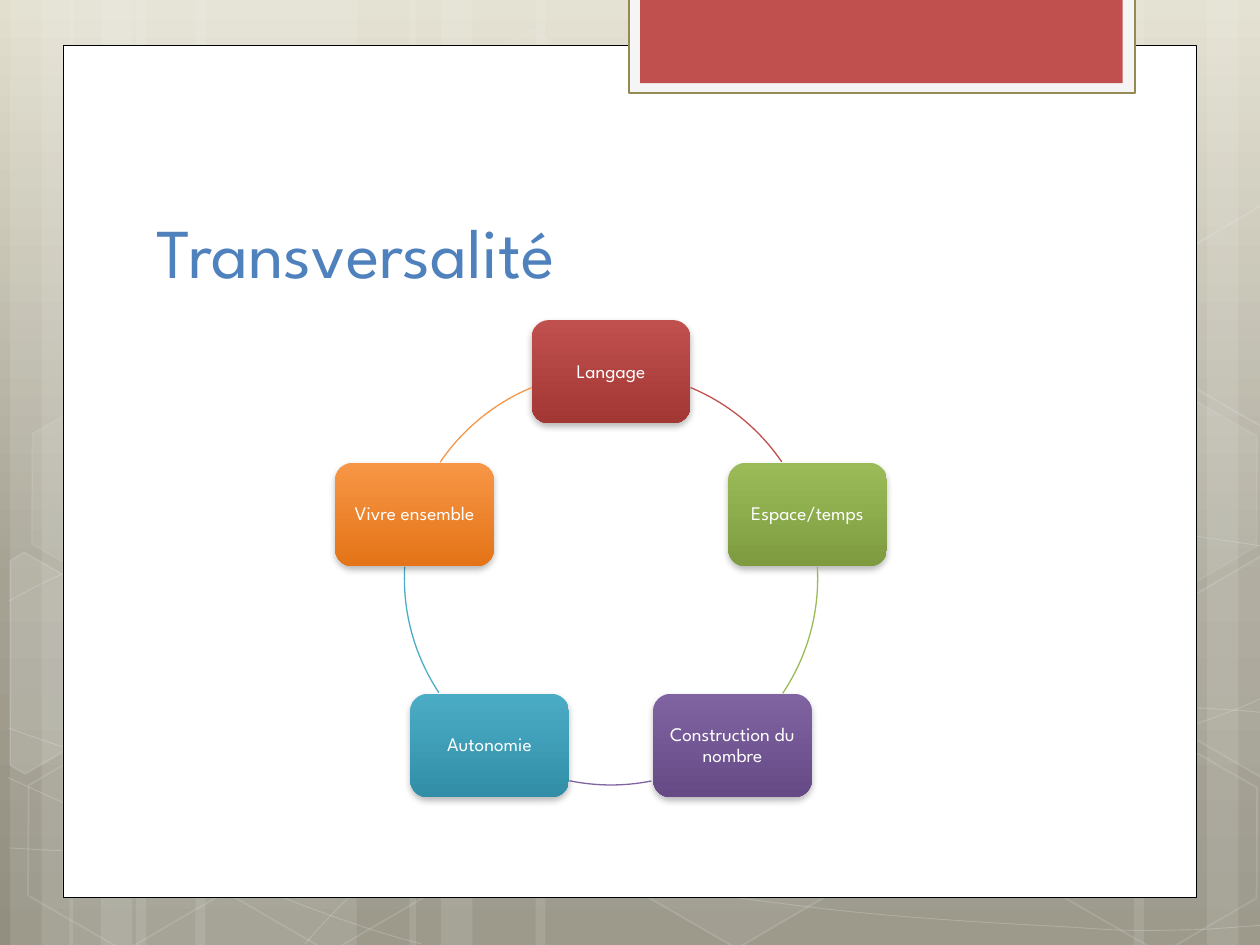
from copy import deepcopy
from math import cos, radians, sin

from lxml.etree import SubElement
from pptx import Presentation
from pptx.dml.color import RGBColor
from pptx.enum.shapes import MSO_SHAPE as Preset
from pptx.enum.text import MSO_ANCHOR as Anchor, PP_ALIGN as Align
from pptx.oxml.ns import qn
from pptx.util import Inches, Pt

FONT = "League Spartan"
COLORS = {
    "white": "FFFFFF", "black": "000000", "tab": "C0504D",
    "tab frame": "F5F5F5", "tab edge": "948A54", "title": "4F81BD",
}

prs = Presentation()
prs.slide_width, prs.slide_height = Inches(10), Inches(7.5)
slide = prs.slides.add_slide(prs.slide_layouts[6])
shapes = slide.shapes


def paint(shape, fill=None, line=None, width=1, fill_alpha=100, line_alpha=100):
    """Give a shape a flat fill and line (None for no paint) and no shadow."""
    shape.shadow.inherit = False
    for target, color, alpha in ((shape.fill, fill, fill_alpha),
                                 (shape.line.fill, line, line_alpha)):
        if color is None:
            target.background()
            continue
        target.solid()
        target.fore_color.rgb = RGBColor.from_string(color)
        if alpha < 100:
            parent = "p:spPr" if target is shape.fill else "p:spPr/a:ln"
            steps = [qn(tag) for tag in f"{parent}/a:solidFill/a:srgbClr".split("/")]
            rgb = shape.element.find("/".join(steps))
            SubElement(rgb, qn("a:alpha"), val=str(alpha * 1000))
    if line:
        shape.line.width = Pt(width)
    return shape


def outline(points, close):
    """Draw a freeform through points given in inches."""
    start, *rest = [(Inches(x), Inches(y)) for x, y in points]
    builder = shapes.build_freeform(*start, scale=1.0)
    builder.add_line_segments(rest, close=close)
    return builder.convert_to_shape()


# Background gradient
backdrop = slide.background.fill
backdrop.gradient()
backdrop.gradient_angle = 270
stop_list = slide.element.find(".//" + qn("a:gsLst"))
stop_list.insert(1, deepcopy(stop_list[0]))
for stop, (position, color) in zip(
        backdrop.gradient_stops, [(0, "E2DFCF"), (0.62, "A5A293"), (1, "928F80")]):
    stop.position = position
    stop.color.rgb = RGBColor.from_string(color)

# Translucent vertical stripes: left, width
stripes = [
    (1.08, 1.75), (0.08, 0.5), (0.33, 0.83), (1.55, 1.75), (0.55, 0.5), (0.8, 0.83),
    (7.33, 1.75), (9.58, 0.5), (9, 0.83), (4.25, 3.08), (3.25, 0.5), (3.5, 0.83),
]
for left, width in stripes:
    stripe = shapes.add_shape(Preset.RECTANGLE, Inches(left), 0, Inches(width), prs.slide_height)
    paint(stripe, COLORS["white"], fill_alpha=10)

# Fine curves: a start point, then two control points and an end per Bezier span
curves = [
    [(0.07, 6.73), (0.61, 6.76), (1.15, 6.79), (1.9, 6.78), (2.65, 6.77), (3.58, 6.75),
     (4.58, 6.65), (5.58, 6.55), (7, 6.36), (7.92, 6.17), (8.83, 5.98), (9.77, 5.68),
     (10.07, 5.51)],
    [(0.07, 4.77), (0.36, 4.61), (0.65, 4.46), (1.21, 4.31), (1.78, 4.16), (2.59, 3.94),
     (3.47, 3.87), (4.36, 3.8), (5.44, 3.79), (6.54, 3.87), (7.64, 3.95), (9.47, 4.26),
     (10.07, 4.34)],
    [(0.06, 6.17), (1.27, 6.72), (2.47, 7.27), (3.34, 7.49)],
    [(0.07, 5.78), (0.38, 5.89), (0.7, 6), (1.28, 6.16), (1.86, 6.31), (2.73, 6.56),
     (3.57, 6.73), (4.4, 6.9), (5.45, 7.08), (6.28, 7.18), (7.11, 7.29), (8, 7.33),
     (8.53, 7.36), (9.05, 7.4), (9.19, 7.38), (9.45, 7.38), (9.71, 7.37), (9.89, 7.35),
     (10.07, 7.34)],
    [(2.42, 7.49), (2.6, 7.29), (2.78, 7.09), (3.02, 6.91), (3.26, 6.73), (3.6, 6.53),
     (3.88, 6.39), (4.16, 6.25), (4.33, 6.19), (4.7, 6.09), (5.06, 5.99), (5.73, 5.85),
     (6.08, 5.78), (6.44, 5.71), (6.49, 5.71), (6.8, 5.69), (7.11, 5.66), (7.6, 5.63),
     (7.94, 5.62), (8.29, 5.61), (8.86, 5.62), (8.86, 5.62), (9.08, 5.62), (9.31, 5.62),
     (9.53, 5.62), (9.71, 5.63), (9.88, 5.64), (9.97, 5.65), (10.06, 5.66), (10.03, 5.65),
     (10.06, 5.66)],
]
for curve in curves:
    strand = paint(outline(curve, close=False), line=COLORS["white"], width=0.5, line_alpha=20)
    # Turn every three line segments into one Bezier span
    segments = strand.element.findall(".//" + qn("a:lnTo"))
    for span, control, end in zip(segments[::3], segments[1::3], segments[2::3]):
        span.tag = qn("a:cubicBezTo")
        for segment in (control, end):
            span.append(segment[0])
            segment.getparent().remove(segment)

# Hexagons: left, top, fill opacity (0 for none), line opacity
hexagons = [
    (3.34, 0.36, 4, 8), (4.97, 5.89, 6, 12), (0.11, 5.91, 0, 12), (0.14, 3.12, 7, 8),
    (1.74, 5.92, 0, 12), (7.53, 4.53, 10, 12), (8.34, 5.93, 0, 12), (8.34, 3.14, 7, 8),
]
TILT = 30
for left, top, fill_alpha, line_alpha in hexagons:
    hexagon = shapes.add_shape(Preset.HEXAGON, Inches(left), Inches(top),
                               Inches(1.75), Inches(1.52))
    hexagon.rotation = TILT
    hexagon.adjustments[0] = 0.285
    paint(hexagon, COLORS["white"] if fill_alpha else None, COLORS["white"],
          fill_alpha=fill_alpha, line_alpha=line_alpha)

# Hexagons cut by the slide edge: center, corners as they appear, fill opacity
cut_hexagons = [
    ((0.36, 5.35), [(0.08, 4.45), (0.19, 4.38), (0.96, 4.82), (0.95, 5.7), (0.2, 6.14),
                    (0.08, 6.07)], 10),
    ((9.85, 5.2), [(9.26, 4.85), (10.01, 4.41), (10.09, 4.46), (10.09, 6.13),
                   (10.02, 6.17), (9.26, 5.73)], 4),
    ((9.85, 2.41), [(9.26, 2.07), (10.01, 1.63), (10.1, 1.68), (10.09, 3.35),
                    (10.02, 3.39), (9.26, 2.95)], 0),
]
c, s = cos(radians(TILT)), sin(radians(TILT))
for (mid_x, mid_y), corners, fill_alpha in cut_hexagons:
    upright = [(mid_x + (x - mid_x) * c + (y - mid_y) * s,
                mid_y - (x - mid_x) * s + (y - mid_y) * c) for x, y in corners]
    piece = outline(upright, close=True)
    piece.rotation = TILT
    paint(piece, COLORS["white"] if fill_alpha else None, COLORS["white"],
          fill_alpha=fill_alpha, line_alpha=12)

# White panel and the red tab at its top
panels = [
    (0.5, 0.36, 9, 6.76, "white", "black", 0.5),
    (4.99, -0.02, 4.02, 0.76, "tab frame", "tab edge", 1.25),
    (5.08, -0.02, 3.83, 0.68, "tab", None, 0),
]
for left, top, width, height, fill, line, weight in panels:
    panel = shapes.add_shape(Preset.RECTANGLE, Inches(left), Inches(top),
                             Inches(width), Inches(height))
    paint(panel, COLORS[fill], COLORS.get(line), weight)

# Title
title = shapes.add_textbox(Inches(1.14), Inches(1.12), Inches(7.68), Inches(1.25)).text_frame
title.word_wrap = True
title.vertical_anchor = Anchor.BOTTOM
title.text = "Transversalité"
title_font = title.paragraphs[0].runs[0].font
title_font.name, title_font.size = FONT, Pt(40)
title_font.color.rgb = RGBColor.from_string(COLORS["title"])

# Cycle: label, gradient colours, start and end angle of the arc that follows
topics = [
    ("Langage", "C0504D", "A23734", 292.6, 325.7),
    ("Espace/temps", "9BBB59", "7E9C3F", 356.8, 33.8),
    ("Construction du nombre", "8064A2", "654A86", 78.7, 101.6),
    ("Autonomie", "4BACC6", "328EA7", 146.4, 183.2),
    ("Vivre ensemble", "F79646", "E47417", 214.2, 247.4),
]
CENTER_X, CENTER_Y, RADIUS = 4.85, 4.59, 1.64
NODE_W, NODE_H = 1.26, 0.82
for index, (label, light, dark, arc_start, arc_end) in enumerate(topics):
    angle = radians(-90 + index * 360 / len(topics))
    node = shapes.add_shape(
        Preset.ROUNDED_RECTANGLE,
        Inches(CENTER_X + RADIUS * cos(angle) - NODE_W / 2),
        Inches(CENTER_Y + RADIUS * sin(angle) - NODE_H / 2),
        Inches(NODE_W), Inches(NODE_H))
    paint(node)
    node.fill.gradient()
    node.fill.gradient_angle = 270
    for stop, position, color in zip(node.fill.gradient_stops, (0, 1), (light, dark)):
        stop.position = position
        stop.color.rgb = RGBColor.from_string(color)
    shadow = SubElement(node.element.spPr.find(qn("a:effectLst")), qn("a:outerShdw"),
                        blurRad=str(Pt(4)), dist=str(Pt(2)), dir="5400000", rotWithShape="0")
    shadow_color = SubElement(shadow, qn("a:srgbClr"), val=COLORS["black"])
    SubElement(shadow_color, qn("a:alpha"), val="28000")

    caption = node.text_frame
    caption.word_wrap = True
    caption.vertical_anchor = Anchor.MIDDLE
    caption.margin_left = caption.margin_right = Inches(0.05)
    caption.margin_top = caption.margin_bottom = Inches(0.05)
    caption.text = label
    line = caption.paragraphs[0]
    line.alignment, line.line_spacing = Align.CENTER, 0.9
    font = line.runs[0].font
    font.name, font.size = FONT, Pt(11)
    font.color.rgb = RGBColor.from_string(COLORS["white"])

    arc = shapes.add_shape(Preset.ARC, Inches(CENTER_X - RADIUS), Inches(CENTER_Y - RADIUS),
                           Inches(2 * RADIUS), Inches(2 * RADIUS))
    # Arc angles are stored in 60000ths of a degree, adjustments in 100000ths
    arc.adjustments[0], arc.adjustments[1] = arc_start * 0.6, arc_end * 0.6
    paint(arc, line=light, width=0.75)

prs.save("out.pptx")
